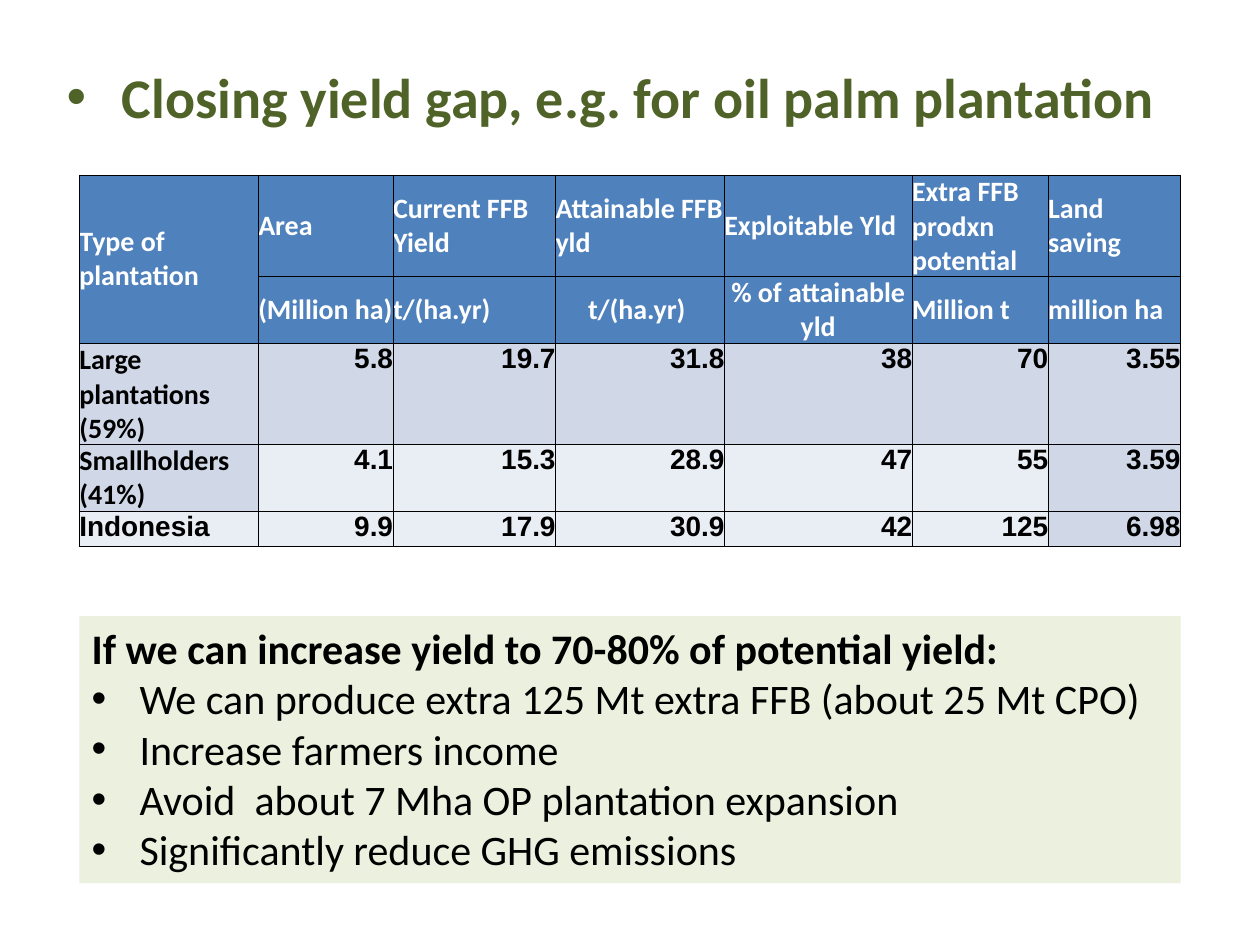
from dataclasses import dataclass

from lxml.etree import SubElement
from pptx import Presentation
from pptx.dml.color import RGBColor
from pptx.enum.shapes import MSO_SHAPE
from pptx.enum.text import MSO_ANCHOR, PP_ALIGN
from pptx.oxml import parse_xml
from pptx.oxml.ns import nsdecls, qn
from pptx.util import Inches, Pt


@dataclass(frozen=True)
class Theme:
    heading: str = "4F6228"
    ink: str = "000000"
    white: str = "FFFFFF"
    header_fill: str = "4F81BD"
    band_dark: str = "D0D8E8"
    band_light: str = "E9EDF4"
    panel: str = "EBF1DE"
    body_font: str = "Calibri"
    figure_font: str = "Arial"
    title_size: int = 32
    panel_size: int = 24
    table_size: int = 16
    border_width: float = 0.5


class SlideBuilder:
    """Holds the theme and the page; lengths are cells of a 100 x 75 grid."""

    def __init__(self, deck, theme):
        self.theme = theme
        self.unit = deck.slide_width / 100
        self.page = deck.slides.add_slide(deck.slide_layouts[6])

    def place(self, *lengths):
        return [round(length * self.unit) for length in lengths]

    def add_text(self, para, text, size, color, **formats):
        span = para.add_run()
        span.text = text
        values = {"name": self.theme.body_font, "size": Pt(size), "bold": True, **formats}
        for name, value in values.items():
            setattr(span.font, name, value)
        span.font.color.rgb = RGBColor.from_string(color)

    def add_bullet(self, para, indent):
        properties = para._p.get_or_add_pPr()
        for name, value in {"marL": indent, "indent": -indent}.items():
            properties.set(name, str(Inches(value)))
        SubElement(properties, qn("a:buFont"), typeface="Arial")
        SubElement(properties, qn("a:buChar"), char="•")

    def title(self, text, area):
        frame = self.page.shapes.add_textbox(*self.place(*area)).text_frame
        frame.word_wrap = True
        frame.vertical_anchor = MSO_ANCHOR.MIDDLE
        para = frame.paragraphs[0]
        self.add_bullet(para, 0.44)
        self.add_text(para, text, self.theme.title_size, self.theme.heading)

    def panel(self, heading, points, area):
        box = self.page.shapes.add_shape(MSO_SHAPE.RECTANGLE, *self.place(*area))
        box.shadow.inherit = False
        box.fill.solid()
        box.fill.fore_color.rgb = RGBColor.from_string(self.theme.panel)
        box.line.fill.background()
        frame = box.text_frame
        frame.word_wrap = True
        frame.vertical_anchor = MSO_ANCHOR.TOP
        for index, text in enumerate([heading, *points]):
            para = frame.add_paragraph() if index else frame.paragraphs[0]
            para.alignment = PP_ALIGN.LEFT
            if index:
                self.add_bullet(para, 0.38)
            self.add_text(para, text, self.theme.panel_size, self.theme.ink, bold=index == 0)

    def table(self, rows, position, widths, heights):
        area = (*position, sum(widths), sum(heights))
        frame = self.page.shapes.add_table(len(rows), len(widths), *self.place(*area))
        grid = frame.table
        for column, width in zip(grid.columns, self.place(*widths)):
            column.width = width
        for row, height in zip(grid.rows, self.place(*heights)):
            row.height = height
        for row, texts in enumerate(rows):
            for column, text in enumerate(texts):
                self.cell(grid.cell(row, column), text, row, column)
        grid.cell(0, 0).merge(grid.cell(1, 0))

    def cell(self, cell, text, row, column):
        theme = self.theme
        header, label, total = row < 2, column == 0, row == 4
        # Fill: the first and last columns keep the darker band
        if header:
            fill = theme.header_fill
        elif row == 2 or column == 6 or (label and not total):
            fill = theme.band_dark
        else:
            fill = theme.band_light
        cell.fill.solid()
        cell.fill.fore_color.rgb = RGBColor.from_string(fill)
        # Margins and anchor
        middle = header or (label and not total)
        formats = {
            "margin_left": 0, "margin_right": 0, "margin_top": 0, "margin_bottom": 0,
            "vertical_anchor": MSO_ANCHOR.MIDDLE if middle else MSO_ANCHOR.TOP,
        }
        for name, value in formats.items():
            setattr(cell, name, value)
        self.borders(cell)
        # Text: centred units, figures to the right
        para = cell.text_frame.paragraphs[0]
        if row == 1 and column in (3, 4):
            para.alignment = PP_ALIGN.CENTER
        elif not header and not label:
            para.alignment = PP_ALIGN.RIGHT
        if text:
            self.add_text(para, text, theme.table_size, theme.white if header else theme.ink,
                          name=theme.body_font if middle else theme.figure_font)

    def borders(self, cell):
        properties = cell._tc.get_or_add_tcPr()
        for index, side in enumerate(("lnL", "lnR", "lnT", "lnB")):
            properties.insert(index, parse_xml(
                f'<a:{side} {nsdecls("a")} w="{Pt(self.theme.border_width)}"><a:solidFill>'
                f'<a:srgbClr val="{self.theme.ink}"/></a:solidFill></a:{side}>'))


YIELD_ROWS = [
    ["Type of plantation", "Area", "Current FFB Yield", "Attainable FFB yld",
     "Exploitable Yld", "Extra FFB prodxn potential", "Land  saving"],
    ["", "(Million ha)", "t/(ha.yr)", "t/(ha.yr) ", "% of attainable yld",
     "Million t", "million ha"],
    ["Large plantations (59%)", "5.8", "19.7", "31.8", "38", "70", "3.55"],
    ["Smallholders (41%)", "4.1", "15.3", "28.9", "47", "55", "3.59"],
    ["Indonesia", "9.9", "17.9", "30.9", "42", "125", "6.98"],
]
BENEFITS = [
    "We can produce extra 125 Mt extra FFB (about 25 Mt CPO)",
    "Increase farmers income",
    "Avoid  about 7 Mha OP plantation expansion",
    "Significantly reduce GHG emissions",
]


def main():
    deck = Presentation()
    deck.slide_width, deck.slide_height = Inches(10), Inches(7.5)
    slide = SlideBuilder(deck, Theme())

    # Title
    slide.title("Closing yield gap, e.g. for oil palm plantation", (4.3, 3.6, 90, 8.1))

    # Yield table
    slide.table(YIELD_ROWS, (6.3, 13.9),
                widths=(14.2, 10.7, 12.9, 13.4, 14.9, 10.8, 10.5),
                heights=(7.7, 5.1, 5.3, 5.1, 2.8))

    # Benefits panel
    slide.panel("If we can increase yield to 70-80% of potential yield:", BENEFITS,
                (6.3, 48.9, 87.4, 21.2))

    deck.save("out.pptx")


if __name__ == "__main__":
    main()
